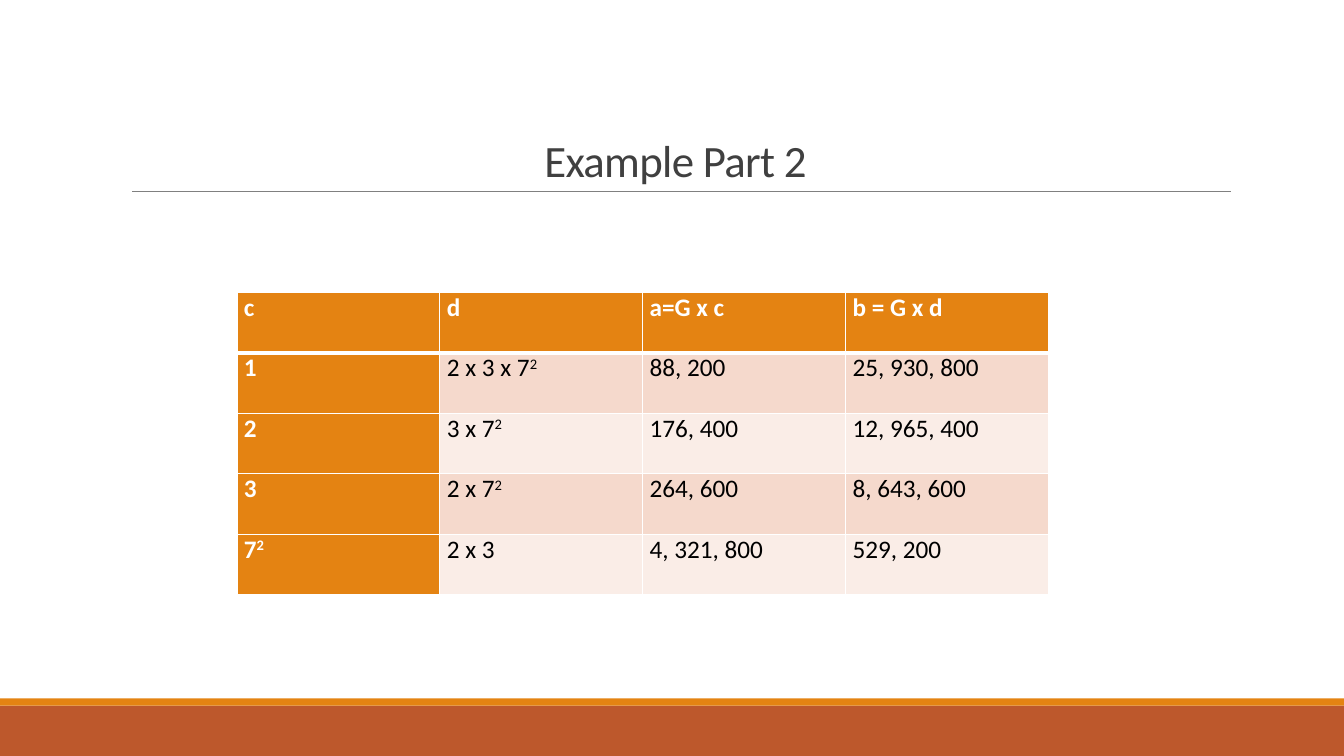
from dataclasses import dataclass

from lxml import etree
from pptx import Presentation
from pptx.dml.color import RGBColor
from pptx.enum.shapes import MSO_CONNECTOR, MSO_SHAPE
from pptx.enum.text import MSO_ANCHOR, PP_ALIGN
from pptx.oxml.ns import qn
from pptx.util import Inches, Pt

RECTANGLE = MSO_SHAPE.RECTANGLE
STRAIGHT = MSO_CONNECTOR.STRAIGHT
BOTTOM = MSO_ANCHOR.BOTTOM
CENTER = PP_ALIGN.CENTER


@dataclass(frozen=True)
class Theme:
    font: str = "Calibri"
    title_size: int = 32
    table_size: int = 18
    orange: str = "E48312"
    rust: str = "BD582C"
    gray: str = "808080"
    title: str = "404040"
    text: str = "000000"
    white: str = "FFFFFF"
    bands: tuple = ("F5D9CC", "FAEDE7")


theme = Theme()


def style_font(font, size, color, bold=False):
    font.name = theme.font
    font.size = Pt(size)
    font.bold = bold
    font.color.rgb = RGBColor.from_string(color)


def add_border(properties, position, side, width):
    line = etree.Element(qn(f"a:{side}"), w=str(Pt(width)))
    fill = etree.SubElement(line, qn("a:solidFill"))
    etree.SubElement(fill, qn("a:srgbClr"), val=theme.white)
    properties.insert(position, line)


deck = Presentation()
deck.slide_width = Inches(13.33)
deck.slide_height = Inches(7.5)
page = deck.slides.add_slide(deck.slide_layouts[5])

for top, height, color in ((7, 0.5, theme.rust), (6.93, 0.07, theme.orange)):
    band = page.shapes.add_shape(
        RECTANGLE, 0, Inches(top), deck.slide_width, Inches(height)
    )
    band.shadow.inherit = False
    band.fill.solid()
    band.fill.fore_color.rgb = RGBColor.from_string(color)
    band.line.fill.background()

rule = page.shapes.add_connector(
    STRAIGHT, Inches(1.31), Inches(1.9), Inches(12.21), Inches(1.9)
)
rule.line.color.rgb = RGBColor.from_string(theme.gray)
rule.line.width = Pt(0.5)
etree.SubElement(rule._element.spPr, qn("a:effectLst"))

title = page.shapes.title
title.left, title.top = Inches(1.2), Inches(0.31)
title.width, title.height = Inches(11), Inches(1.59)
title.text_frame.vertical_anchor = BOTTOM
title.text_frame.word_wrap = True
para = title.text_frame.paragraphs[0]
para.alignment = CENTER
para.line_spacing = 0.85
style_font(para.font, theme.title_size, theme.title)
span = para.add_run()
span.text = "Example Part 2"
span._r.get_or_add_rPr().set("spc", "-50")

rows = (
    ("c", "d", "a=G x c", "b = G x d"),
    ("1", "2 x 3 x 7^2", "88, 200", "25, 930, 800"),
    ("2", "3 x 7^2", "176, 400", "12, 965, 400"),
    ("3", "2 x 7^2", "264, 600", "8, 643, 600"),
    ("7^2", "2 x 3", "4, 321, 800", "529, 200"),
)
table = page.shapes.add_table(
    len(rows), len(rows[0]), Inches(2.35), Inches(2.9), Inches(8.05), Inches(3)
).table
table.first_row = False
table.horz_banding = False

for row_index, row in enumerate(rows):
    for column_index, text in enumerate(row):
        cell = table.cell(row_index, column_index)
        heading = row_index == 0 or column_index == 0
        fill = theme.orange if heading else theme.bands[(row_index - 1) % 2]
        cell.fill.solid()
        cell.fill.fore_color.rgb = RGBColor.from_string(fill)
        cell.margin_left = cell.margin_right = Inches(0.07)
        cell.margin_top = cell.margin_bottom = 0

        para = cell.text_frame.paragraphs[0]
        for part_index, part in enumerate(text.split("^")):
            span = para.add_run()
            span.text = part
            color = theme.white if heading else theme.text
            style_font(span.font, theme.table_size, color, heading)
            if part_index == 1:
                span._r.get_or_add_rPr().set("baseline", "30000")

        widths = {
            "lnL": 1,
            "lnR": 1,
            "lnT": 3 if row_index == 1 else 1,
            "lnB": 3 if row_index == 0 else 1,
        }
        properties = cell._tc.get_or_add_tcPr()
        for position, (side, width) in enumerate(widths.items()):
            add_border(properties, position, side, width)

deck.save("out.pptx")
